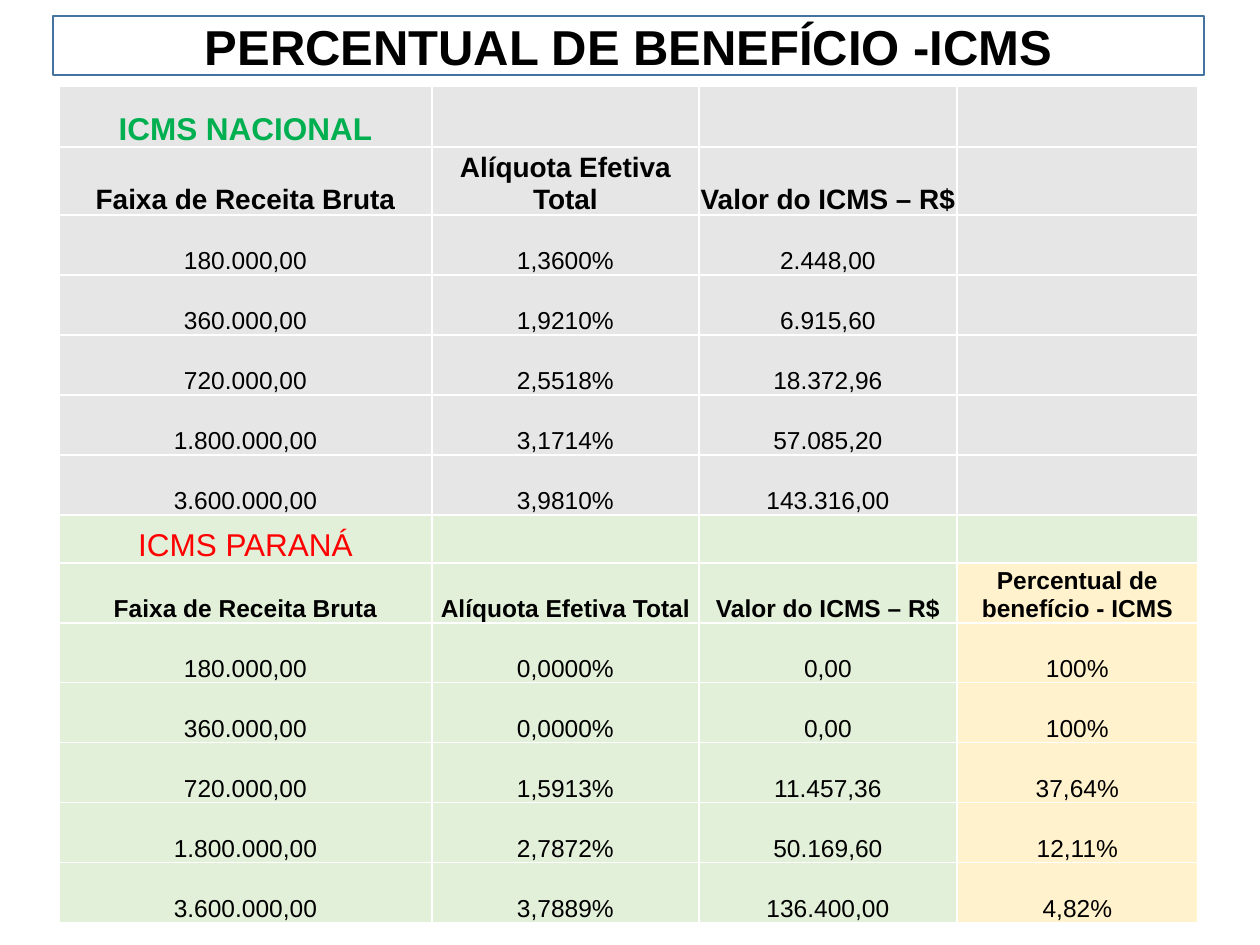
from lxml.etree import SubElement
from pptx import Presentation
from pptx.dml.color import RGBColor
from pptx.enum.shapes import MSO_SHAPE
from pptx.enum.text import MSO_ANCHOR, PP_ALIGN
from pptx.oxml.ns import qn
from pptx.util import Pt

PX = 914400 // 126  # EMU per px
COLORS = {"white": "FFFFFF", "black": "000000", "frame": "43739E",
          "gray": "E7E6E6", "green": "E2F0D9", "cream": "FFF2CC",
          "national": "00B050", "state": "FF0000"}


def rgb(name):
    return RGBColor.from_string(COLORS[name])


def write(tf, text, size, bold=False, color="black"):
    p = tf.paragraphs[0]
    p.alignment = PP_ALIGN.CENTER
    r = p.add_run()
    r.text = text
    r.font.color.rgb = rgb(color)
    for key, value in {"name": "Arial", "size": Pt(size), "bold": bold}.items():
        setattr(r.font, key, value)


prs = Presentation()
prs.slide_width, prs.slide_height = 1260 * PX, 945 * PX
s = prs.slides.add_slide(prs.slide_layouts[6])

# Title bar
sp = s.shapes.add_shape(MSO_SHAPE.RECTANGLE, 53 * PX, 16 * PX, 1151 * PX, 59 * PX)
sp.shadow.inherit = False
sp.fill.solid()
sp.fill.fore_color.rgb = rgb("white")
sp.line.color.rgb = rgb("frame")
sp.line.width = Pt(1)
tf = sp.text_frame
tf.word_wrap = True
tf.vertical_anchor = MSO_ANCHOR.MIDDLE
write(tf, "PERCENTUAL DE BENEFÍCIO -ICMS", 28, True)

# Table contents
header = ["Faixa de Receita Bruta", "Alíquota Efetiva Total", "Valor do ICMS – R$"]
rows = [
    ["ICMS NACIONAL"],
    header,
    ["180.000,00", "1,3600%", "2.448,00"],
    ["360.000,00", "1,9210%", "6.915,60"],
    ["720.000,00", "2,5518%", "18.372,96"],
    ["1.800.000,00", "3,1714%", "57.085,20"],
    ["3.600.000,00", "3,9810%", "143.316,00"],
    ["ICMS PARANÁ"],
    header + ["Percentual de benefício - ICMS"],
    ["180.000,00", "0,0000%", "0,00", "100%"],
    ["360.000,00", "0,0000%", "0,00", "100%"],
    ["720.000,00", "1,5913%", "11.457,36", "37,64%"],
    ["1.800.000,00", "2,7872%", "50.169,60", "12,11%"],
    ["3.600.000,00", "3,7889%", "136.400,00", "4,82%"],
]
STATE_ROW = 7  # first row of the state block
row_format = {
    0: {"size": 18, "bold": True, "color": "national"},
    1: {"size": 16, "bold": True},
    STATE_ROW: {"size": 18, "color": "state"},
    STATE_ROW + 1: {"size": 14, "bold": True},
}
cell_format = {"margin_left": PX, "margin_right": PX, "margin_top": PX,
               "margin_bottom": 0, "vertical_anchor": MSO_ANCHOR.BOTTOM}
col_widths = [373, 267, 258, 241]
row_heights = [61, 68] + [60] * 5 + [48] + [60] * 6

# Table grid
table = s.shapes.add_table(len(rows), len(col_widths), 59 * PX, 86 * PX,
                           sum(col_widths) * PX, sum(row_heights) * PX).table
for col, width in zip(table.columns, col_widths):
    col.width = width * PX
for row, height in zip(table.rows, row_heights):
    row.height = height * PX

# Cells: white borders, block fill, text
for i, texts in enumerate(rows):
    for j in range(len(col_widths)):
        cell = table.cell(i, j)
        for key, value in cell_format.items():
            setattr(cell, key, value)
        tcPr = cell._tc.get_or_add_tcPr()
        for side in ("lnL", "lnR", "lnT", "lnB"):
            ln = SubElement(tcPr, qn("a:" + side), w=str(Pt(1)))
            fill = SubElement(ln, qn("a:solidFill"))
            SubElement(fill, qn("a:srgbClr"), val=COLORS["white"])
        block = "gray" if i < STATE_ROW else "green"
        if i > STATE_ROW and j == 3:
            block = "cream"
        cell.fill.solid()
        cell.fill.fore_color.rgb = rgb(block)
        if j < len(texts):
            write(cell.text_frame, texts[j], **row_format.get(i, {"size": 14}))

prs.save("out.pptx")
